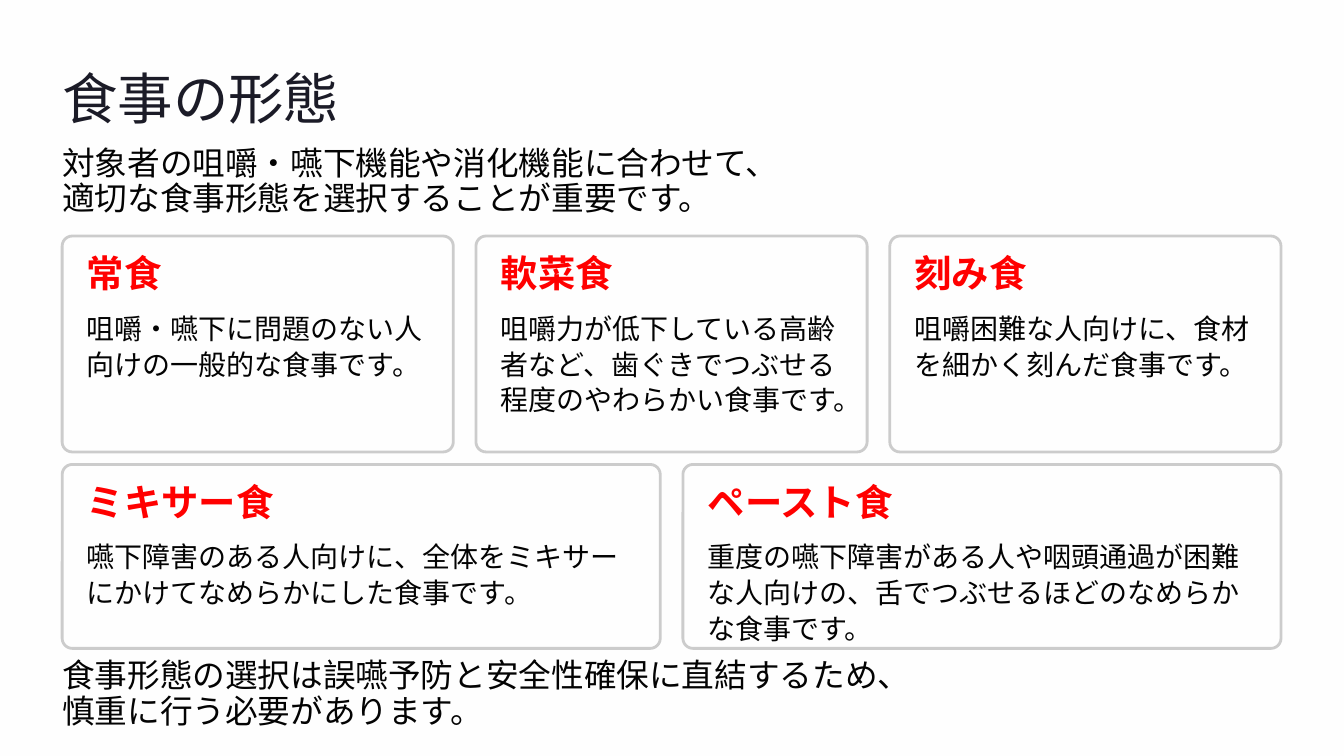
from lxml import etree
from pptx import Presentation
from pptx.dml.color import RGBColor
from pptx.enum.shapes import MSO_SHAPE
from pptx.enum.text import MSO_ANCHOR, PP_ALIGN
from pptx.oxml.ns import qn
from pptx.util import Inches, Pt

ROUND = MSO_SHAPE.ROUNDED_RECTANGLE
TOP = MSO_ANCHOR.TOP
LEFT = PP_ALIGN.LEFT

WIDE, HIGH = 16, 9
COLS, EDGE, GAP = 6, 0.74, 0.27
SPAN = 14.51
ROW = HIGH / 100
PAD = 3.28
RADIUS = 0.12

STYLES = {
    "title": ({"size": Pt(47.5), "name": "Inter"}, "1B1B27", 59.5),
    "lead": ({"size": Pt(28), "name": "Lato"}, "030303", 30.5),
    "head": ({"size": Pt(32), "name": "Inter", "bold": True}, "FF0000", 29.5),
    "body": ({"size": Pt(24), "name": "Lato"}, "030303", 30.5),
}

CARDS = [
    (31.22, 28.56, [
        ("常食", "咀嚼・嚥下に問題のない人向けの一般的な食事です。"),
        ("軟菜食", "咀嚼力が低下している高齢者など、歯ぐきでつぶせる程度のやわらかい食事です。"),
        ("刻み食", "咀嚼困難な人向けに、食材を細かく刻んだ食事です。"),
    ]),
    (61.44, 24.33, [
        ("ミキサー食", "嚥下障害のある人向けに、全体をミキサーにかけてなめらかにした食事です。"),
        ("ペースト食", "重度の嚥下障害がある人や咽頭通過が困難な人向けの、舌でつぶせるほどのなめらかな食事です。"),
    ]),
]


def color(code):
    return RGBColor.from_string(code)


def apply(target, values):
    for name, value in values.items():
        setattr(target, name, value)


class Page:
    def __init__(self, deck):
        self.slide = deck.slides.add_slide(deck.slide_layouts[6])
        fill = self.slide.background.fill
        fill.solid()
        fill.fore_color.rgb = color("FEFEFE")

    def place(self, col, span, top, high, pad=0):
        unit = (SPAN - GAP * (COLS - 1)) / COLS
        inset = pad * ROW
        left = EDGE + col * (unit + GAP) + inset
        width = span * (unit + GAP) - GAP - 2 * inset
        return [Inches(v) for v in (left, top * ROW, width, high * ROW)]

    def text(self, style, lines, area, wrap=False):
        font, ink, pitch = STYLES[style]
        frame = self.slide.shapes.add_textbox(*area).text_frame
        apply(frame, {"margin_left": 0, "margin_right": 0, "margin_top": 0,
                      "margin_bottom": 0, "word_wrap": wrap,
                      "vertical_anchor": TOP})
        for i, line in enumerate(lines):
            para = frame.add_paragraph() if i else frame.paragraphs[0]
            apply(para, {"line_spacing": Pt(pitch), "alignment": LEFT})
            run = para.add_run()
            run.text = line
            apply(run.font, font)
            run.font.color.rgb = color(ink)

    def panel(self, area, high):
        shape = self.slide.shapes.add_shape(ROUND, *area)
        shape.shadow.inherit = False
        shape.adjustments[0] = RADIUS / (high * ROW)
        shape.fill.solid()
        shape.fill.fore_color.rgb = color("FFFFFF")
        tint = shape.fill._xPr.find(qn("a:solidFill"))[0]
        etree.SubElement(tint, qn("a:alpha"), val="95000")
        shape.line.color.rgb = color("CCCCCC")
        shape.line.width = Pt(2.4)

    def card(self, col, span, top, high, head, body):
        self.panel(self.place(col, span, top, high), high)
        self.text("head", [head], self.place(col, span, top + PAD, 4.56, PAD))
        self.text("body", [body], self.place(col, span, top + 9.72, 9.44, PAD), True)


def main():
    deck = Presentation()
    apply(deck, {"slide_width": Inches(WIDE), "slide_height": Inches(HIGH)})
    page = Page(deck)
    page.text("title", ["食事の形態"], page.place(0, 3, 8.11, 9.22))
    page.text("lead", ["対象者の咀嚼・嚥下機能や消化機能に合わせて、",
                       "適切な食事形態を選択することが重要です。"],
              page.place(0, COLS, 19.33, 4.89))
    for top, high, cards in CARDS:
        span = COLS // len(cards)
        for i, (head, body) in enumerate(cards):
            page.card(i * span, span, top, high, head, body)
    page.text("lead", ["食事形態の選択は誤嚥予防と安全性確保に直結するため、",
                       "慎重に行う必要があります。"],
              page.place(0, COLS, 87.11, 4.67))
    deck.save("out.pptx")


if __name__ == "__main__":
    main()
